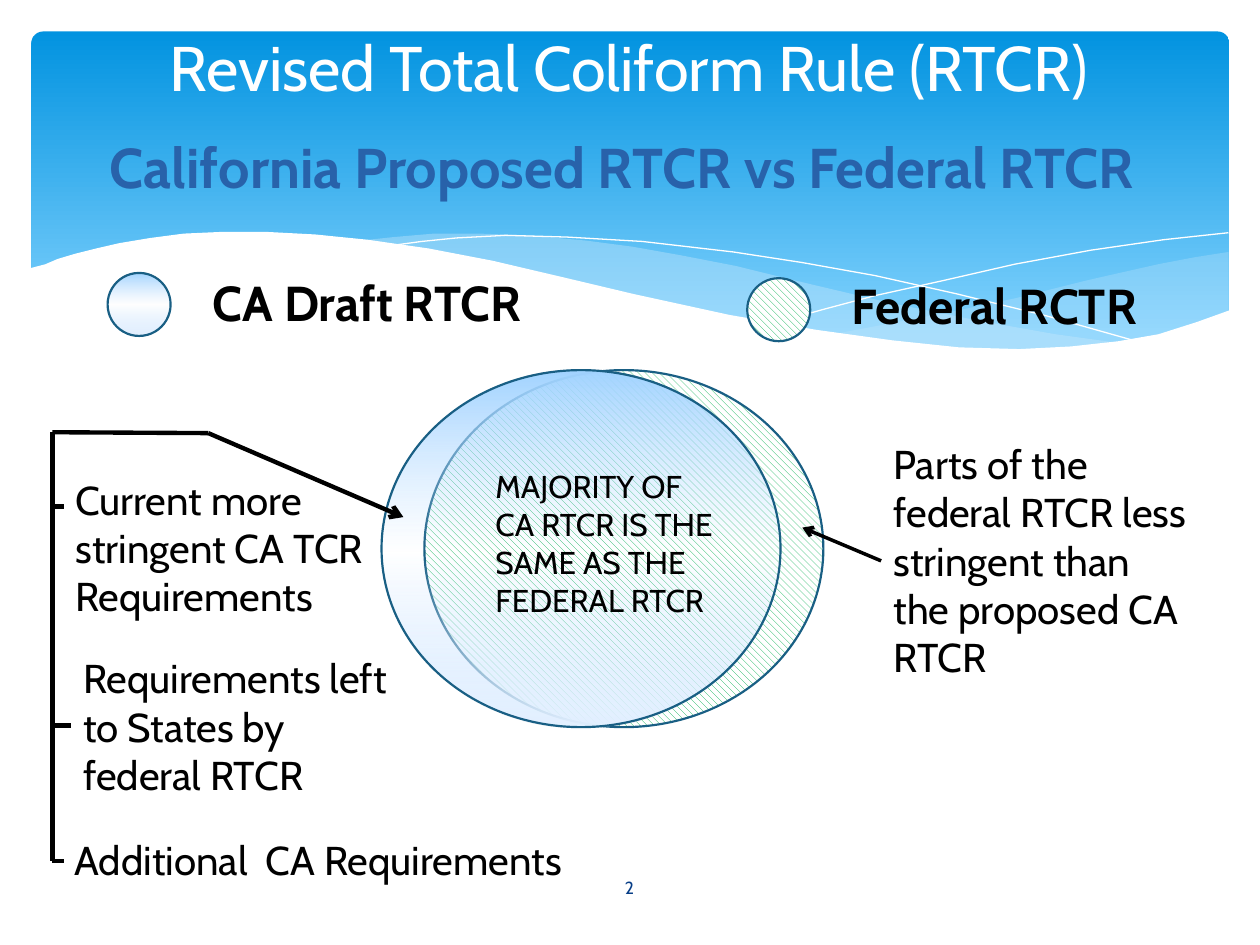
import lxml.etree
import pptx
import pptx.dml.color
import pptx.enum.dml
import pptx.enum.shapes
import pptx.enum.text
import pptx.oxml.ns
import pptx.util

Pt = pptx.util.Pt
qn = pptx.oxml.ns.qn
Shape = pptx.enum.shapes.MSO_SHAPE
Align = pptx.enum.text.PP_ALIGN
Anchor = pptx.enum.text.MSO_ANCHOR


def color(value):
    return pptx.dml.color.RGBColor.from_string(value)


class SlideBuilder:
    font = "Cabin"
    outline = "195F84"

    def __init__(self, slide):
        self.slide = slide
        self.shapes = slide.shapes

    def preset(self, kind, left, top, width, height, line=None):
        shape = self.shapes.add_shape(kind, Pt(left), Pt(top), Pt(width), Pt(height))
        shape.shadow.inherit = False
        if line:
            shape.line.color.rgb = color(line)
            shape.line.width = Pt(1.25)
        else:
            shape.line.fill.background()
        return shape

    def gradient(self, shape, stops):
        shape.fill.background()
        old_fill = shape.element.spPr.find(qn("a:noFill"))
        gradient = lxml.etree.Element(qn("a:gradFill"), rotWithShape="1")
        stop_list = lxml.etree.SubElement(gradient, qn("a:gsLst"))
        for position, value, alpha in stops:
            stop = lxml.etree.SubElement(stop_list, qn("a:gs"), pos=str(position * 1000))
            stop_color = lxml.etree.SubElement(stop, qn("a:srgbClr"), val=value)
            lxml.etree.SubElement(stop_color, qn("a:alpha"), val=str(alpha * 1000))
        lxml.etree.SubElement(gradient, qn("a:lin"), ang="5400000", scaled="0")
        old_fill.getparent().replace(old_fill, gradient)

    def california_circle(self, left, top, width, height):
        shape = self.preset(Shape.OVAL, left, top, width, height, self.outline)
        self.gradient(shape, [(0, "A1D3FF", 100), (51, "C6E2FF", 0), (100, "E3F0FF", 100)])

    def federal_circle(self, left, top, width, height):
        shape = self.preset(Shape.OVAL, left, top, width, height, self.outline)
        shape.fill.patterned()
        shape.fill.pattern = pptx.enum.dml.MSO_PATTERN.WIDE_DOWNWARD_DIAGONAL
        shape.fill.fore_color.rgb = color("00B050")
        shape.fill.back_color.rgb = color("FFFFFF")

    def curve(self, points, fill=None, alpha=100):
        points = [(Pt(x), Pt(y)) for x, y in points]
        builder = self.shapes.build_freeform(*points[0])
        builder.add_line_segments(points[1:], close=fill is not None)
        shape = builder.convert_to_shape()
        shape.shadow.inherit = False
        if fill:
            shape.fill.solid()
            shape.fill.fore_color.rgb = color(fill)
            fill_color = shape.element.spPr.find(qn("a:solidFill")).find(qn("a:srgbClr"))
            lxml.etree.SubElement(fill_color, qn("a:alpha"), val=str(alpha * 1000))
            shape.line.fill.background()
        else:
            shape.fill.background()
            shape.line.color.rgb = color("FFFFFF")
            shape.line.width = Pt(0)

    def line(self, start, end, width=2.5, arrow=False):
        connector = self.shapes.add_connector(
            pptx.enum.shapes.MSO_CONNECTOR.STRAIGHT, *[Pt(value) for value in start + end])
        connector.line.color.rgb = color("000000")
        connector.line.width = Pt(width)
        if arrow:
            outline = connector.element.spPr.find(qn("a:ln"))
            lxml.etree.SubElement(outline, qn("a:tailEnd"), type="arrow")
        lxml.etree.SubElement(connector.element.spPr, qn("a:effectLst"))

    def fill_text(self, shape, text, size, value="000000", bold=False,
                  align=Align.LEFT, anchor=Anchor.TOP):
        frame = shape.text_frame
        frame.word_wrap = True
        frame.auto_size = pptx.enum.text.MSO_AUTO_SIZE.NONE
        frame.vertical_anchor = anchor
        paragraph = frame.paragraphs[0]
        paragraph.alignment = align
        run = paragraph.add_run()
        run.text = text
        run.font.name = self.font
        run.font.size = Pt(size)
        run.font.bold = bold
        run.font.color.rgb = color(value)

    def text(self, left, top, width, height, text, size, **style):
        box = self.shapes.add_textbox(Pt(left), Pt(top), Pt(width), Pt(height))
        self.fill_text(box, text, size, **style)

    def title(self, left, top, width, height, text, size, **style):
        title = self.shapes.title
        title.left, title.top = Pt(left), Pt(top)
        title.width, title.height = Pt(width), Pt(height)
        self.fill_text(title, text, size, **style)
        title.element.getparent().append(title.element)


RIGHT_WAVE = [
    (702, 144), (683, 147), (662, 151), (631, 158), (620, 160.5), (580, 170.5),
    (542, 178.5), (508, 185), (476, 191), (508, 195), (536, 198), (562, 199.5),
    (586, 200), (615, 199), (640, 197), (663, 192.5), (683, 187), (702, 178)]
MIDDLE_WAVE = [
    (643, 196.5), (603, 191), (558, 183), (508, 173), (453, 160), (420.5, 152),
    (389.5, 146), (361.5, 141), (335, 137.5), (302, 134.5), (274, 133.5),
    (248, 133.5), (225, 135.5), (206, 137.5), (246, 143), (291, 152), (323, 160),
    (382, 173), (433, 184), (479, 191.5), (520, 197), (557, 199.5), (597, 200),
    (624, 199)]
FALLING_LINE = [
    (222.5, 140.5), (241, 138), (261, 136), (289, 134.5), (324, 135.5), (367, 138),
    (419, 144), (458, 150), (500, 157.5), (547, 168), (598, 180.5), (653, 196)]
RISING_LINE = [
    (441.5, 185), (470, 177), (500, 169), (538.5, 160.5), (580, 151),
    (623.5, 143), (665, 137), (702, 133)]
WHITE_WAVE = [
    (703.5, 177), (684, 184), (662, 191), (639, 195), (612, 198), (582.5, 199.5),
    (548, 198.5), (510, 194.5), (466.5, 188.5), (417, 180), (362, 168),
    (322, 158.5), (281.5, 149), (245, 142), (210, 137), (180, 134), (152, 132.5),
    (127, 132.5), (105, 133.5), (86, 136), (68, 139), (55, 142), (43, 145),
    (33, 148), (26, 151), (16.5, 153.5), (16.5, 237), (703.5, 237)]


def main():
    presentation = pptx.Presentation()
    presentation.slide_width = Pt(720)
    presentation.slide_height = Pt(540)
    slide = SlideBuilder(presentation.slides.add_slide(presentation.slide_layouts[5]))

    band = slide.preset(Shape.ROUNDED_RECTANGLE, 18, 18, 684.5, 194.5)
    band.adjustments[0] = 0.034
    slide.gradient(band, [(0, "0293E0", 100), (90, "83D3FE", 100)])
    slide.curve(RIGHT_WAVE, "C6E7FC", 29)
    slide.curve(MIDDLE_WAVE, "C6E7FC", 40)
    slide.curve(FALLING_LINE)
    slide.curve(RISING_LINE)
    slide.curve(WHITE_WAVE, "FFFFFF")

    slide.federal_circle(242.5, 211.5, 228, 204)
    slide.california_circle(218, 211.5, 228, 204)
    slide.federal_circle(427, 159, 36, 36)
    slide.california_circle(61.5, 156, 36, 36)
    slide.text(114.5, 152, 197, 41, "CA Draft RTCR", 28, bold=True)
    slide.text(479.5, 154, 186, 41, "Federal RCTR", 28, bold=True)

    slide.line((119, 247.5), (230.5, 295.5), arrow=True)
    slide.line((119, 247.5), (30, 247))
    slide.line((30, 247), (30, 492))
    for top, end in [(289.5, 36.5), (414.5, 40.5), (492, 36.5)]:
        slide.line((30, top), (end, top))
    slide.line((503.5, 320.5), (458.5, 301.5), width=2, arrow=True)

    for left, top, width, height, text in [
            (36, 268, 202, 91, "Current more stringent CA TCR Requirements"),
            (40.5, 370, 200, 91, "Requirements left to States by federal RTCR"),
            (35.5, 474, 325.5, 36, "Additional  CA Requirements"),
            (503.5, 247.5, 186.5, 147,
             "Parts of the federal RTCR less stringent than the proposed CA RTCR")]:
        slide.text(left, top, width, height, text, 23)

    slide.text(40.5, 72, 630, 46, "California Proposed RTCR vs Federal RTCR", 32,
               value="2862AA", bold=True, align=Align.CENTER)
    slide.title(41, 12.5, 636.5, 51, "Revised Total Coliform Rule (RTCR)", 36,
                value="FFFFFF", align=Align.CENTER)
    slide.text(276, 263.5, 144, 94.5,
               "MAJORITY OF CA RTCR IS THE SAME AS THE FEDERAL RTCR", 18)
    slide.text(314, 492.5, 91.5, 29, "2", 10, value="073E87",
               align=Align.CENTER, anchor=Anchor.MIDDLE)

    presentation.save("out.pptx")


if __name__ == "__main__":
    main()
